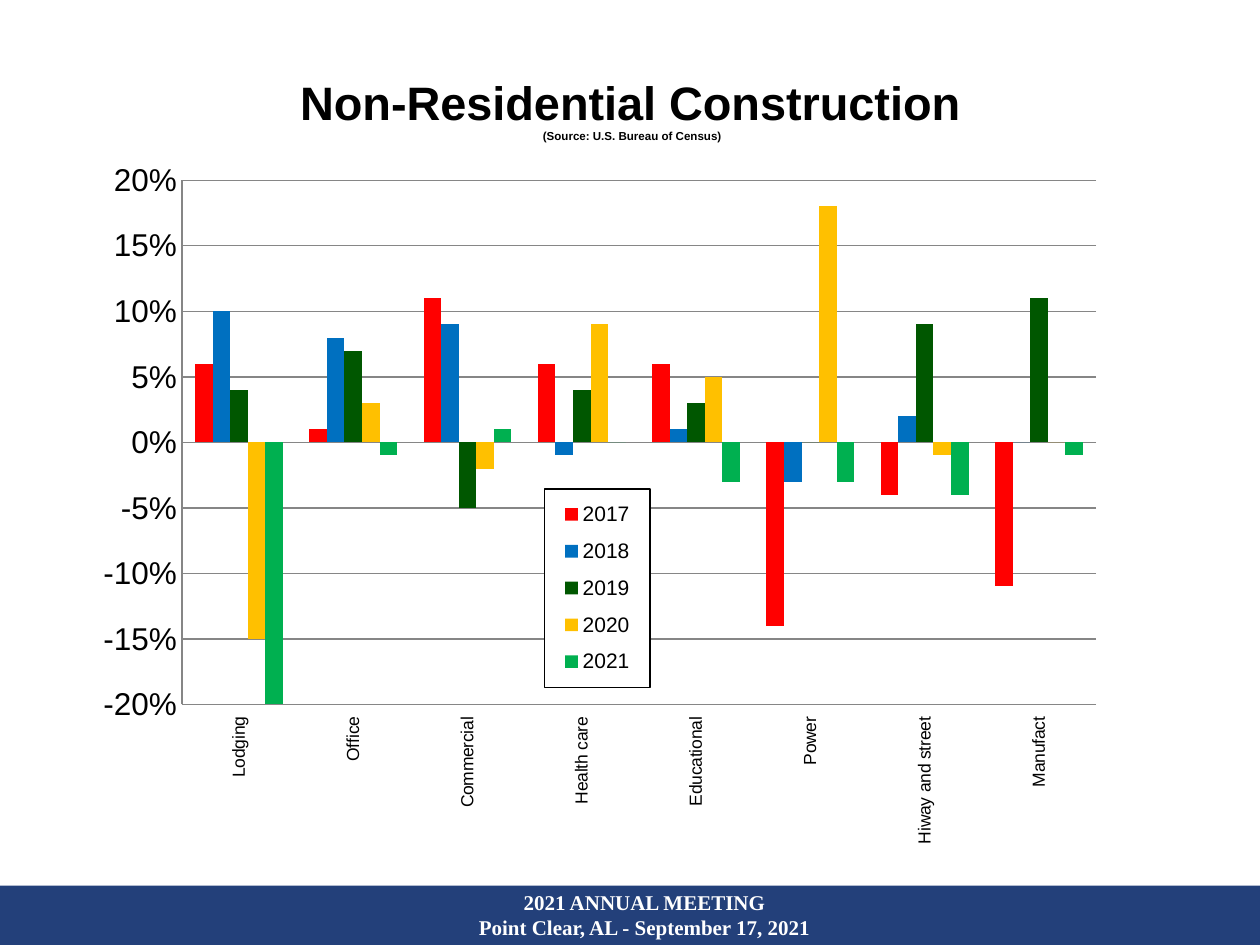
from dataclasses import dataclass

from lxml import etree
from pptx import Presentation
from pptx.chart import data as cd
from pptx.dml.color import RGBColor
from pptx.enum import chart as ce, shapes, text
from pptx.oxml import parse_xml
from pptx.oxml.ns import nsdecls, qn
from pptx.util import Pt

BLACK = RGBColor(0x00, 0x00, 0x00)
WHITE = RGBColor(0xFF, 0xFF, 0xFF)
NAVY = RGBColor(0x23, 0x40, 0x7A)
GRAY = RGBColor(0x86, 0x86, 0x86)
RED = RGBColor(0xFF, 0x00, 0x00)
BLUE = RGBColor(0x00, 0x70, 0xC0)
PINE = RGBColor(0x00, 0x57, 0x00)
GOLD = RGBColor(0xFF, 0xC0, 0x00)
GREEN = RGBColor(0x00, 0xB0, 0x50)


@dataclass
class Box:
    left: float
    top: float
    width: float
    height: float

    def spot(self) -> tuple:
        return Pt(self.left), Pt(self.top), Pt(self.width), Pt(self.height)


@dataclass
class Line:
    words: str
    size: float


@dataclass
class Year:
    name: str
    color: RGBColor
    rates: tuple


KINDS = ("Lodging", "Office", "Commercial", "Health care", "Educational",
         "Power", "Hiway and street", "Manufact")
YEARS = (
    Year("2017", RED, (0.06, 0.01, 0.11, 0.06, 0.06, -0.14, -0.04, -0.11)),
    Year("2018", BLUE, (0.1, 0.08, 0.09, -0.01, 0.01, -0.03, 0.02, 0)),
    Year("2019", PINE, (0.04, 0.07, -0.05, 0.04, 0.03, 0, 0.09, 0.11)),
    Year("2020", GOLD, (-0.15, 0.03, -0.02, 0.09, 0.05, 0.18, -0.01, 0)),
    Year("2021", GREEN, (-0.21, -0.01, 0.01, 0, -0.03, -0.03, -0.04, -0.01)),
)


def add_words(slide, box: Box, lines: tuple, face: str, color: RGBColor,
              space: float = 1.0) -> None:
    frame = slide.shapes.add_textbox(*box.spot()).text_frame
    frame.word_wrap = True
    frame.vertical_anchor = text.MSO_ANCHOR.MIDDLE
    para = frame.paragraphs[0]
    para.alignment = text.PP_ALIGN.CENTER
    para.line_spacing = space
    for spot, line in enumerate(lines):
        if spot:
            para.add_line_break()
        run = para.add_run()
        run.text = line.words
        run.font.name = face
        run.font.size = Pt(line.size)
        run.font.bold = True
        run.font.color.rgb = color


def make_layout(x: float, y: float, w: float, h: float,
                inner: bool = False) -> etree._Element:
    goal = '<c:layoutTarget val="inner"/>' if inner else ""
    return parse_xml(
        f'<c:layout {nsdecls("c")}><c:manualLayout>{goal}'
        '<c:xMode val="edge"/><c:yMode val="edge"/>'
        f'<c:x val="{x}"/><c:y val="{y}"/><c:w val="{w}"/><c:h val="{h}"/>'
        '</c:manualLayout></c:layout>')


def drop_layout(part: etree._Element) -> None:
    for old in part.findall(qn("c:layout")):
        part.remove(old)


def set_line(line, color: RGBColor) -> None:
    line.color.rgb = color
    line.width = Pt(0.75)


def style_axes(chart) -> None:
    kind = chart.category_axis
    kind.tick_label_position = ce.XL_TICK_LABEL_POSITION.LOW
    kind.tick_labels.font.size = Pt(10)
    body = kind._element.find(qn("c:txPr")).find(qn("a:bodyPr"))
    body.set("rot", "-5400000")
    body.set("vert", "horz")
    rate = chart.value_axis
    rate.minimum_scale, rate.maximum_scale = -0.2, 0.2
    rate.major_unit = 0.05
    rate.tick_labels.number_format = "0%"
    rate.tick_labels.number_format_is_linked = False
    rate.has_major_gridlines = True
    set_line(rate.major_gridlines.format.line, GRAY)
    for axis in (kind, rate):
        axis.major_tick_mark = ce.XL_TICK_MARK.NONE
        axis.minor_tick_mark = ce.XL_TICK_MARK.NONE
        set_line(axis.format.line, GRAY)


def style_key(chart) -> None:
    chart.has_legend = True
    key = chart.legend
    key.position = ce.XL_LEGEND_POSITION.RIGHT
    key.include_in_layout = False
    key.font.size = Pt(12)
    part = key._element
    drop_layout(part)
    part.find(qn("c:legendPos")).addnext(make_layout(0.44, 0.46, 0.1, 0.28))
    part.find(qn("c:overlay")).addnext(parse_xml(
        f'<c:spPr {nsdecls("c", "a")}>'
        f'<a:solidFill><a:srgbClr val="{WHITE}"/></a:solidFill>'
        f'<a:ln w="{Pt(0.75)}"><a:solidFill><a:srgbClr val="{BLACK}"/>'
        '</a:solidFill></a:ln></c:spPr>'))


def add_bars(slide, box: Box) -> None:
    data = cd.CategoryChartData(number_format="0%")
    data.categories = KINDS
    for year in YEARS:
        data.add_series(year.name, year.rates)
    chart = slide.shapes.add_chart(
        ce.XL_CHART_TYPE.COLUMN_CLUSTERED, *box.spot(), data).chart
    chart.has_title = False
    chart.font.name = "Arial"
    chart.font.size = Pt(18)
    chart.font.color.rgb = BLACK
    plot = chart.plots[0]
    plot.gap_width = 150
    plot.overlap = 0
    plot.vary_by_categories = False
    for bars, year in zip(plot.series, YEARS):
        bars.invert_if_negative = False
        bars.format.fill.solid()
        bars.format.fill.fore_color.rgb = year.color
    style_axes(chart)
    style_key(chart)
    area = chart._chartSpace.chart.plotArea
    drop_layout(area)
    area.insert(0, make_layout(0.095, 0.025, 0.869, 0.739, True))


def main() -> None:
    deck = Presentation()
    deck.slide_width, deck.slide_height = Pt(720), Pt(540)
    slide = deck.slides.add_slide(deck.slide_layouts[6])
    band = slide.shapes.add_shape(
        shapes.MSO_SHAPE.RECTANGLE, *Box(0, 506, 720, 34).spot())
    band.shadow.inherit = False
    band.fill.solid()
    band.fill.fore_color.rgb = NAVY
    band.line.fill.background()
    add_words(slide, Box(161.3, 504, 414, 37.4),
              (Line("2021 ANNUAL MEETING", 12),
               Line("Point Clear, AL - September 17, 2021", 12)),
              "Times New Roman", WHITE)
    add_words(slide, Box(146, 52, 428.5, 24),
              (Line("Non-Residential Construction", 26.8),
               Line(" (Source: U.S. Bureau of Census)", 6.6)),
              "Arial", BLACK, 0.89)
    add_bars(slide, Box(46.8, 92.9, 601.2, 405.4))
    deck.save("out.pptx")


if __name__ == "__main__":
    main()
